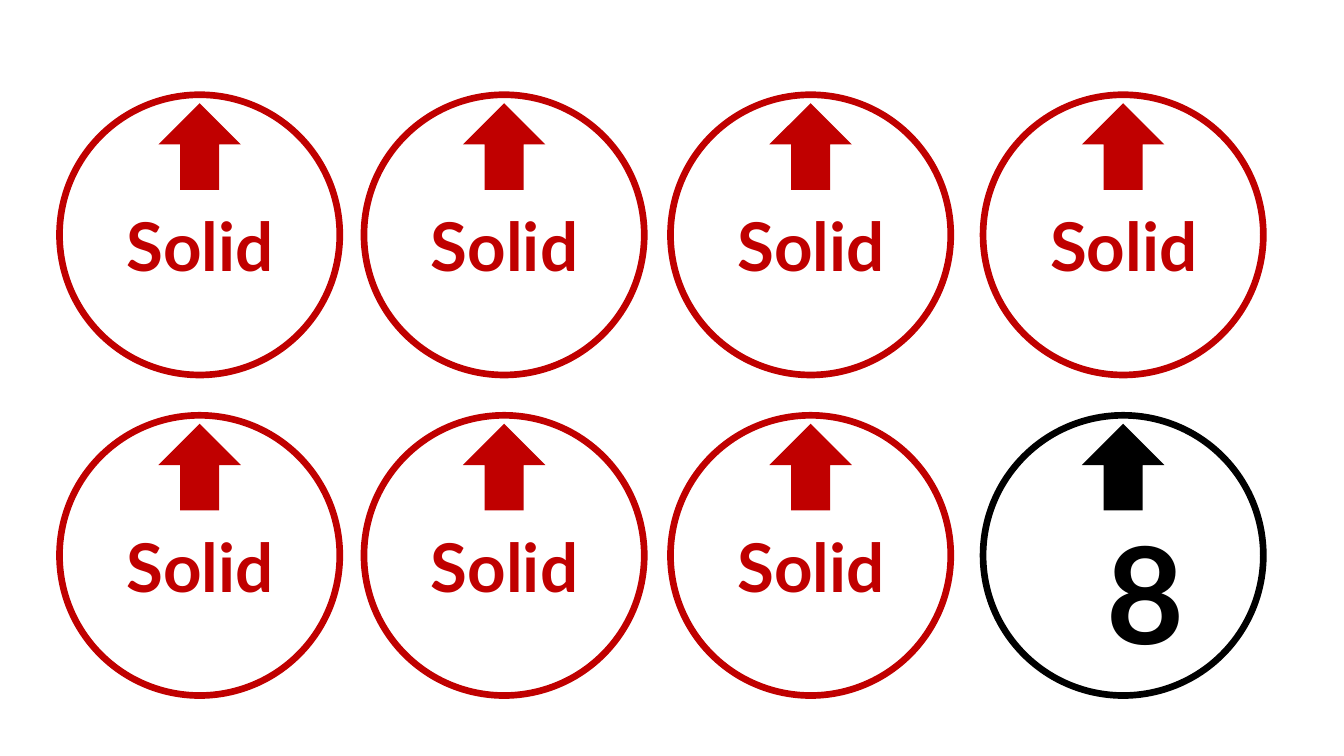
from lxml import etree
from pptx import Presentation
from pptx.dml.color import RGBColor
from pptx.enum.shapes import MSO_SHAPE as Shape
from pptx.enum.text import MSO_AUTO_SIZE as Fit, PP_ALIGN as Align
from pptx.oxml.ns import qn
from pptx.util import Pt

RED = RGBColor(0xC0, 0x00, 0x00)
BLACK = RGBColor(0x00, 0x00, 0x00)
PX = 9144  # 100 px to the inch

# Content: one token per cell of the grid
SOLID = dict(text="Solid", color=RED, size=48, box=(37, 104, 205, 91))
EIGHT = dict(text="8", color=BLACK, size=96, box=(113, 89, 51, 172))
ROWS = [
    [SOLID, SOLID, SOLID, SOLID],
    [SOLID, SOLID, SOLID, EIGHT],
]

# Layout
LEFTS = [59, 361, 665, 975]
TOP, STEP = 94, 318
RING = (0, 0, 278, 278)
ARROW = (111, 16, 56, 73)


def place(x, y, box):
    left, top, wide, high = box
    return [n * PX for n in (x + left, y + top, wide, high)]


def add_form(group, kind, spot, color, width, filled=False):
    form = group.shapes.add_shape(kind, *spot)
    form.shadow.inherit = False
    if filled:
        form.fill.solid()
        form.fill.fore_color.rgb = color
    else:
        form.fill.background()
    form.line.color.rgb = color
    form.line.width = Pt(width)
    # Sharp corners
    line = form.line._get_or_add_ln()
    etree.SubElement(line, qn("a:miter")).set("lim", "800000")


def add_text(group, spot, text, color, size):
    box = group.shapes.add_textbox(*spot)
    frame = box.text_frame
    frame.word_wrap = True
    frame.auto_size = Fit.SHAPE_TO_FIT_TEXT
    para = frame.paragraphs[0]
    para.alignment = Align.CENTER
    run = para.add_run()
    run.text = text
    font = run.font
    font.name, font.size, font.bold = "Lato", Pt(size), True
    font.color.rgb = color


def add_token(slide, x, y, text, color, size, box):
    group = slide.shapes.add_group_shape()
    add_form(group, Shape.OVAL, place(x, y, RING), color, 4.75)
    add_form(group, Shape.UP_ARROW, place(x, y, ARROW), color, 7.75, filled=True)
    add_text(group, place(x, y, box), text, color, size)


def main():
    deck = Presentation()
    deck.slide_width, deck.slide_height = 1333 * PX, 750 * PX
    slide = deck.slides.add_slide(deck.slide_layouts[6])
    for row, tokens in enumerate(ROWS):
        for x, token in zip(LEFTS, tokens):
            add_token(slide, x, TOP + row * STEP, **token)
    deck.save("out.pptx")


if __name__ == "__main__":
    main()
